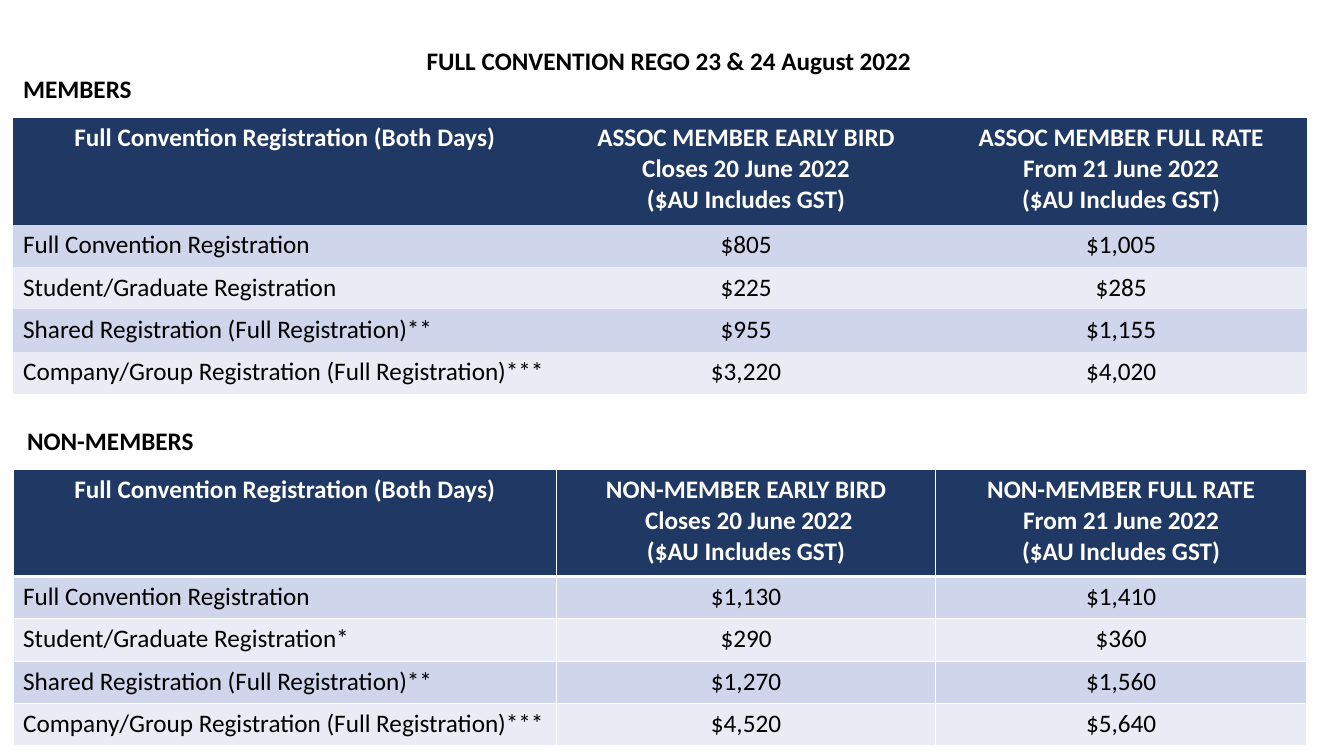
from dataclasses import dataclass

from lxml.etree import SubElement
from pptx import Presentation
from pptx.dml.color import RGBColor
from pptx.enum.text import MSO_ANCHOR, MSO_AUTO_SIZE, PP_ALIGN
from pptx.oxml.ns import qn
from pptx.util import Emu, Pt

EMU_PER_PX = 9144  # 100 px to the inch
TITLE_ONLY_LAYOUT = 5
PLAIN_TABLE_STYLE = "{2D5ABB26-0587-4C30-8999-92F81FD0307C}"
COLORS = {
    "navy": "203864",
    "band_dark": "CFD5EA",
    "band_light": "E9EBF5",
    "white": "FFFFFF",
    "black": "000000",
}
FONT = {"name": "Calibri", "size": Pt(18)}
COLUMN_WIDTHS = (539, 376, 368)
HEADER_HEIGHT = 106
ROW_HEIGHT = 42
TABLE_LEFT = 13


@dataclass(frozen=True)
class Box:
    left: int
    top: int
    width: int
    height: int


@dataclass(frozen=True)
class RateTable:
    heading: str
    heading_box: Box
    top: int
    bordered: bool
    rows: tuple[tuple[str, str, str], ...]


RATE_TABLES = (
    RateTable("MEMBERS", Box(13, 68, 129, 40), 117, False, (
        ("Full Convention Registration (Both Days)",
         "ASSOC MEMBER EARLY BIRD\nCloses 20 June 2022\n($AU Includes GST)",
         "ASSOC MEMBER FULL RATE\nFrom 21 June 2022\n($AU Includes GST)"),
        ("Full Convention Registration", "$805", "$1,005"),
        ("Student/Graduate Registration", "$225", "$285"),
        ("Shared Registration (Full Registration)**", "$955", "$1,155"),
        ("Company/Group Registration (Full Registration)***", "$3,220", "$4,020"),
    )),
    RateTable("NON-MEMBERS", Box(17, 417, 187, 40), 466, True, (
        ("Full Convention Registration (Both Days)",
         "NON-MEMBER EARLY BIRD\n Closes 20 June 2022\n($AU Includes GST)",
         "NON-MEMBER FULL RATE\nFrom 21 June 2022\n($AU Includes GST)"),
        ("Full Convention Registration", "$1,130", "$1,410"),
        ("Student/Graduate Registration*", "$290", "$360"),
        ("Shared Registration (Full Registration)**", "$1,270", "$1,560"),
        ("Company/Group Registration (Full Registration)***", "$4,520", "$5,640"),
    )),
)


def px(length: int) -> Emu:
    return Emu(length * EMU_PER_PX)


def rgb(name: str) -> RGBColor:
    return RGBColor.from_string(COLORS[name])


def apply_format(target, values: dict) -> None:
    for name, value in values.items():
        setattr(target, name, value)


def write_text(text_frame, text: str, color: str, bold: bool, align: PP_ALIGN) -> None:
    paragraph = text_frame.paragraphs[0]
    paragraph.text = text
    paragraph.alignment = align
    for run in paragraph.runs:
        apply_format(run.font, FONT | {"bold": bold})
        run.font.color.rgb = rgb(color)


def format_label(shape, text: str, align: PP_ALIGN) -> None:
    """Turn a shape into a bold one-line label that fits its text."""
    write_text(shape.text_frame, text, "black", True, align)
    apply_format(shape.text_frame, {
        "word_wrap": False,
        "auto_size": MSO_AUTO_SIZE.SHAPE_TO_FIT_TEXT,
        "vertical_anchor": MSO_ANCHOR.TOP,
    })


def add_borders(cell, top: int, bottom: int) -> None:
    """Add white borders; call before filling, as the schema puts lines first."""
    properties = cell._tc.get_or_add_tcPr()
    for side, points in (("L", 1), ("R", 1), ("T", top), ("B", bottom)):
        line = SubElement(properties, qn(f"a:ln{side}"), w=str(Pt(points)))
        fill = SubElement(line, qn("a:solidFill"))
        SubElement(fill, qn("a:srgbClr"), val=COLORS["white"])


def fill_cell(cell, text: str, row: int, column: int, bordered: bool) -> None:
    is_header = row == 0
    if bordered:
        add_borders(cell, top=3 if row == 1 else 1, bottom=3 if is_header else 1)
    cell.fill.solid()
    band = "band_dark" if row % 2 else "band_light"
    cell.fill.fore_color.rgb = rgb("navy" if is_header else band)
    centred = is_header or column > 0
    write_text(cell.text_frame, text, "white" if is_header else "black", is_header,
               PP_ALIGN.CENTER if centred else PP_ALIGN.LEFT)


def add_rate_table(slide, rates: RateTable) -> None:
    row_heights = [HEADER_HEIGHT] + [ROW_HEIGHT] * (len(rates.rows) - 1)
    table = slide.shapes.add_table(
        len(row_heights), len(COLUMN_WIDTHS), px(TABLE_LEFT), px(rates.top),
        px(sum(COLUMN_WIDTHS)), px(sum(row_heights))).table
    table._tbl.tblPr.find(qn("a:tableStyleId")).text = PLAIN_TABLE_STYLE
    apply_format(table, {"first_row": True, "horz_banding": True})
    for column, width in zip(table.columns, COLUMN_WIDTHS):
        column.width = px(width)
    for row, height in zip(table.rows, row_heights):
        row.height = px(height)
    for row, texts in enumerate(rates.rows):
        for column, text in enumerate(texts):
            fill_cell(table.cell(row, column), text, row, column, rates.bordered)


def add_heading(slide, text: str, box: Box) -> None:
    heading = slide.shapes.add_textbox(
        px(box.left), px(box.top), px(box.width), px(box.height))
    format_label(heading, text, PP_ALIGN.LEFT)


def main() -> None:
    presentation = Presentation()
    apply_format(presentation, {"slide_width": px(1333), "slide_height": px(750)})
    slide = presentation.slides.add_slide(presentation.slide_layouts[TITLE_ONLY_LAYOUT])

    title = slide.shapes.title
    apply_format(title, {"left": px(408), "top": px(40),
                         "width": px(511), "height": px(40)})
    format_label(title, "FULL CONVENTION REGO 23 & 24 August 2022", PP_ALIGN.CENTER)

    for rates in RATE_TABLES:
        add_rate_table(slide, rates)
        add_heading(slide, rates.heading, rates.heading_box)

    presentation.save("out.pptx")


if __name__ == "__main__":
    main()
